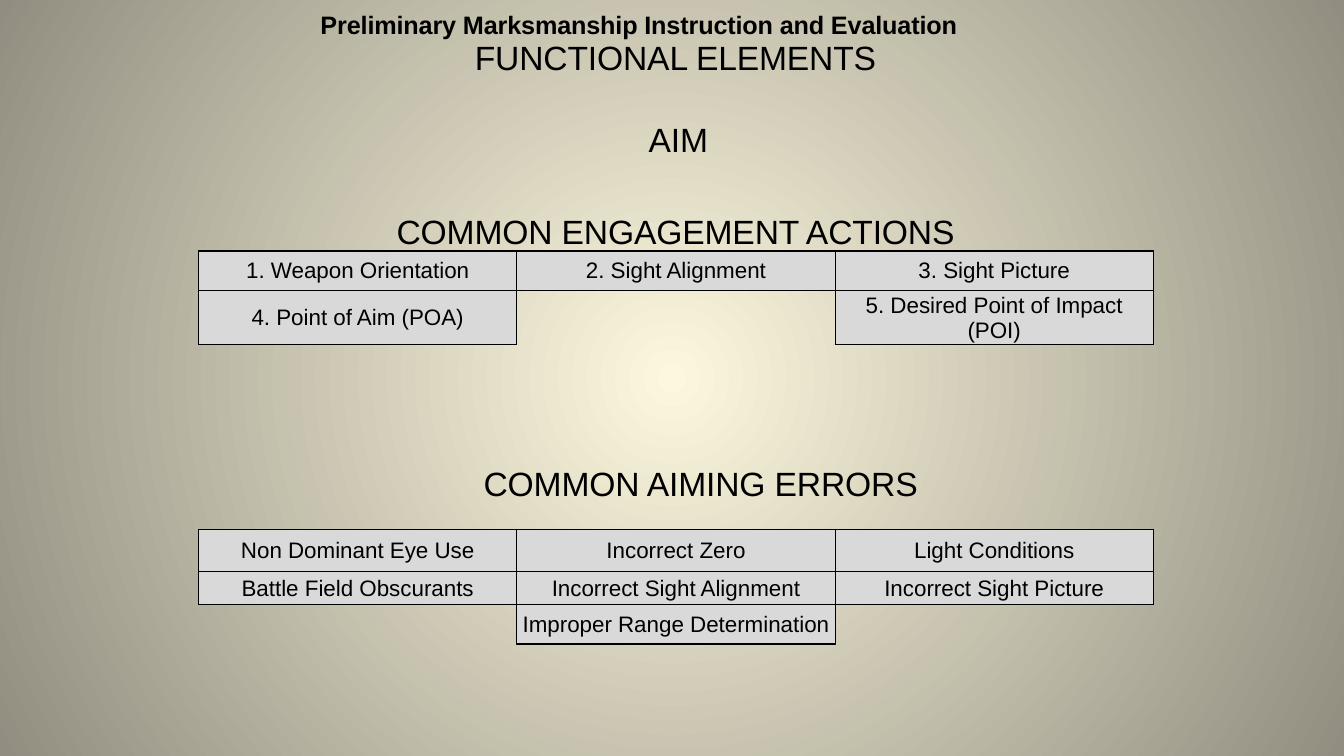
"""Build a slide on aiming: functional elements, engagement actions and errors."""
from lxml import etree
from pptx import Presentation
from pptx.dml.color import RGBColor
from pptx.enum.text import MSO_ANCHOR, MSO_AUTO_SIZE, PP_ALIGN
from pptx.oxml.ns import qn
from pptx.util import Inches, Pt

CENTER = PP_ALIGN.CENTER
TOP, MIDDLE = MSO_ANCHOR.TOP, MSO_ANCHOR.MIDDLE
NO_AUTOFIT = MSO_AUTO_SIZE.NONE
PLAIN_TABLE = "{2D5ABB26-0587-4C30-8999-92F81FD0307C}"

THEME = {
    "font": "Arial",
    "ink": RGBColor.from_string("000000"),
    "cell": RGBColor.from_string("D9D9D9"),
    "glow": RGBColor.from_string("FCF7DD"),
    "edge": RGBColor.from_string("918E81"),
    "banner": Pt(18),
    "heading": Pt(24),
    "item": Pt(16),
    "border": Pt(1),
}

deck = Presentation()
deck.slide_width, deck.slide_height = Inches(13.33), Inches(7.5)
COL, ROW = deck.slide_width / 100, deck.slide_height / 100
slide = deck.slides.add_slide(deck.slide_layouts[5])

backdrop = slide.background.fill
backdrop.gradient()
for stop, tone in zip(backdrop.gradient_stops, ("glow", "edge")):
    stop.color.rgb = THEME[tone]
gradient = slide.element.find(".//" + qn("a:gradFill"))
gradient.remove(gradient.find(qn("a:lin")))
circle = etree.SubElement(gradient, qn("a:path"), path="circle")
etree.SubElement(circle, qn("a:fillToRect"), l="50000", t="50000", r="50000", b="50000")


def write(frame, words, size, bold=False):
    """Fill a text frame with one centred paragraph."""
    paragraph = frame.paragraphs[0]
    paragraph.alignment = CENTER
    run = paragraph.add_run()
    run.text = words
    look = {"name": THEME["font"], "size": THEME[size], "bold": bold}
    for key, value in look.items():
        setattr(run.font, key, value)
    run.font.color.rgb = THEME["ink"]
    return paragraph


HEADINGS = [
    ("Preliminary Marksmanship Instruction and Evaluation", "banner", 15.45, 1.07, 64.07, 4.27),
    ("FUNCTIONAL ELEMENTS", "heading", 12.53, 4.8, 75, 5.6),
    ("AIM", "heading", 12.75, 15.6, 75, 5.6),
    ("COMMON ENGAGEMENT ACTIONS", "heading", 12.53, 27.73, 75, 5.6),
    ("COMMON AIMING ERRORS", "heading", 14.4, 61.07, 75, 5.6),
]
for words, level, left, top, width, height in HEADINGS:
    is_title = words == "FUNCTIONAL ELEMENTS"
    heading = slide.shapes.title if is_title else slide.shapes.add_textbox(0, 0, 0, 0)
    place = {
        "left": round(left * COL), "top": round(top * ROW),
        "width": round(width * COL), "height": round(height * ROW),
    }
    for key, value in place.items():
        setattr(heading, key, value)
    is_banner = level == "banner"
    layout = {
        "margin_left": 0, "margin_right": 0, "margin_bottom": 0,
        "margin_top": 0 if is_banner else Inches(0.01),
        "word_wrap": True, "auto_size": NO_AUTOFIT, "vertical_anchor": TOP,
    }
    for key, value in layout.items():
        setattr(heading.text_frame, key, value)
    line = write(heading.text_frame, words, level, is_banner)
    line.line_spacing = 1.04 if is_banner else 1.0
    line.runs[0].font._element.set("spc", "-10")
    line._p.get_or_add_pPr().set("marL", str(Inches(0.01 if is_banner else 0.06)))

ACTIONS = [
    ["1. Weapon Orientation", "2. Sight Alignment", "3. Sight Picture"],
    ["4. Point of Aim (POA)", "", "5. Desired Point of Impact (POI)"],
]
ERRORS = [
    ["Non Dominant Eye Use", "Incorrect Zero", "Light Conditions"],
    ["Battle Field Obscurants", "Incorrect Sight Alignment", "Incorrect Sight Picture"],
    ["", "Improper Range Determination", ""],
]
CELL_LAYOUT = {
    "margin_left": Inches(0.02), "margin_right": Inches(0.02),
    "margin_top": Inches(0.01), "margin_bottom": 0, "vertical_anchor": MIDDLE,
}
for items, top, heights in ((ACTIONS, 33.2, (5.2, 7.2)), (ERRORS, 70, (5.6, 4.4, 5.2))):
    holder = slide.shapes.add_table(
        len(items), 3, round(14.78 * COL), round(top * ROW),
        round(71.04 * COL), round(sum(heights) * ROW))
    table = holder.table
    table.first_row = table.horz_banding = False
    table._tbl.tblPr.find(qn("a:tableStyleId")).text = PLAIN_TABLE
    for table_row, height in zip(table.rows, heights):
        table_row.height = round(height * ROW)
    for r, names in enumerate(items):
        for c, name in enumerate(names):
            cell = table.cell(r, c)
            for key, value in CELL_LAYOUT.items():
                setattr(cell, key, value)
            if not name:
                cell.text_frame.paragraphs[0].font.size = THEME["item"]
                cell.fill.background()
                continue
            write(cell.text_frame, name, "item")
            props = cell._tc.get_or_add_tcPr()
            for side in ("lnL", "lnR", "lnT", "lnB"):
                border = etree.SubElement(props, qn(f"a:{side}"), w=str(THEME["border"]))
                paint = etree.SubElement(border, qn("a:solidFill"))
                etree.SubElement(paint, qn("a:srgbClr"), val=str(THEME["ink"]))
            cell.fill.solid()
            cell.fill.fore_color.rgb = THEME["cell"]

deck.save("out.pptx")
